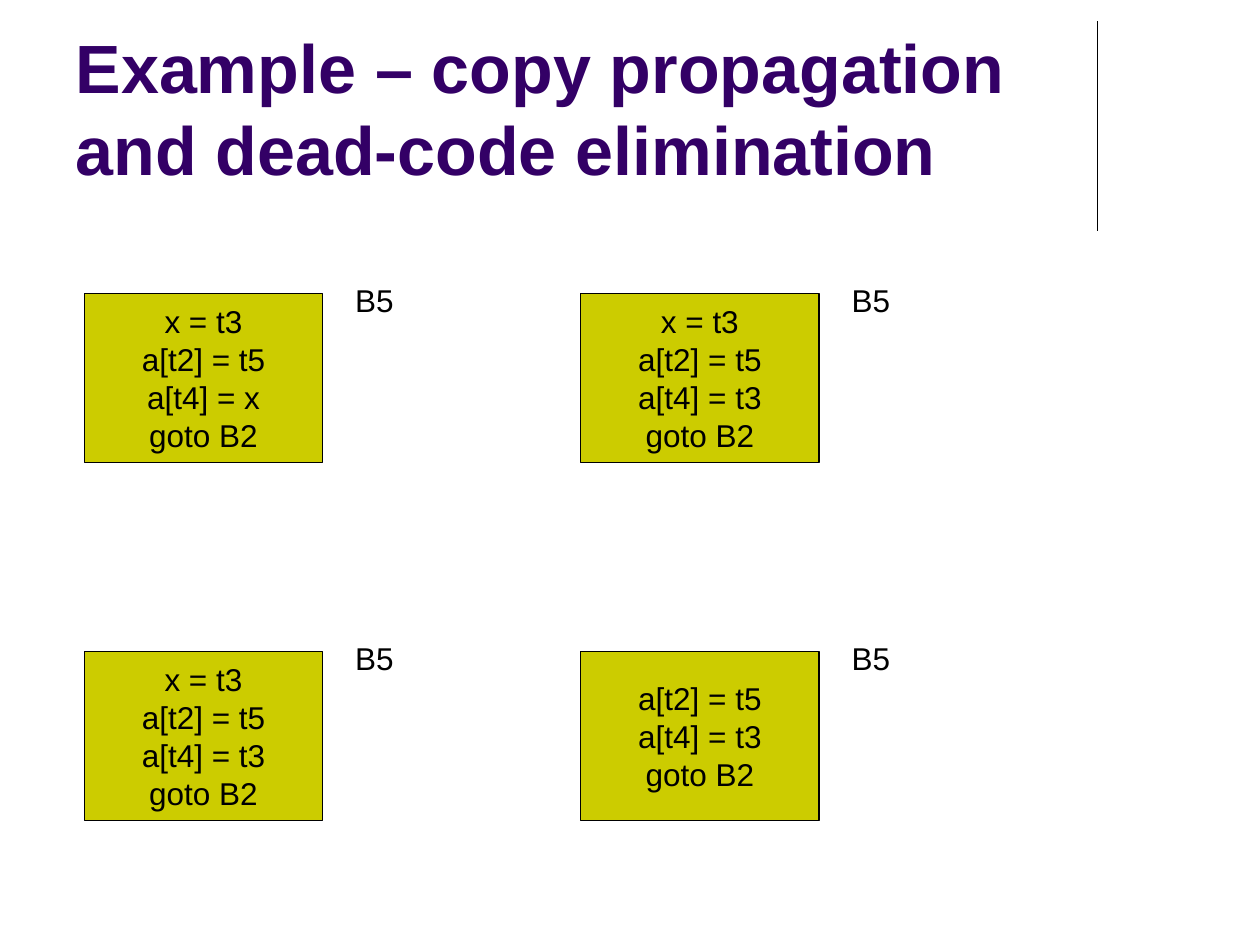
from dataclasses import dataclass

from lxml.etree import SubElement
from pptx import Presentation
from pptx.dml.color import RGBColor
from pptx.enum.shapes import MSO_CONNECTOR, MSO_SHAPE
from pptx.enum.text import MSO_ANCHOR, MSO_AUTO_SIZE, PP_ALIGN
from pptx.oxml.ns import qn
from pptx.slide import Slide
from pptx.text.text import _Paragraph
from pptx.util import Inches, Pt

COLORS = {"title": "330066", "block": "CCCC00", "ink": "000000"}
FONT = "Arial"
COLUMNS = (0.67, 4.61)
ROWS = (2.33, 5.17)
BLOCK_WIDTH, BLOCK_HEIGHT = 1.89, 1.34
LABEL_DX, LABEL_DY = 2.05, -0.15


@dataclass(frozen=True)
class BasicBlock:
    label: str
    column: int
    row: int
    code: tuple[str, ...]


BLOCKS = (
    BasicBlock("B5", 0, 0, ("x = t3", "a[t2] = t5", "a[t4] = x", "goto B2")),
    BasicBlock("B5", 1, 0, ("x = t3", "a[t2] = t5", "a[t4] = t3", "goto B2")),
    BasicBlock("B5", 0, 1, ("x = t3", "a[t2] = t5", "a[t4] = t3", "goto B2")),
    BasicBlock("B5", 1, 1, ("a[t2] = t5", "a[t4] = t3", "goto B2")),
)


def color(name: str) -> RGBColor:
    return RGBColor.from_string(COLORS[name])


def add_run(paragraph: _Paragraph, text: str, size: float = 18,
            ink: str = "ink", bold: bool = False) -> None:
    run = paragraph.add_run()
    run.text = text
    run.font.name = FONT
    run.font.size = Pt(size)
    run.font.bold = bold
    run.font.color.rgb = color(ink)


def add_title(slide: Slide, text: str) -> None:
    title = slide.shapes.title
    title.left, title.top = Inches(0.5), Inches(0.13)
    title.width, title.height = Inches(8.25), Inches(1.42)
    frame = title.text_frame
    frame.word_wrap = True
    frame.auto_size = MSO_AUTO_SIZE.NONE
    frame.vertical_anchor = MSO_ANCHOR.BOTTOM
    heading = frame.paragraphs[0]
    heading.alignment = PP_ALIGN.LEFT
    add_run(heading, text, size=39, ink="title", bold=True)


def add_divider(slide: Slide) -> None:
    divider = slide.shapes.add_connector(
        MSO_CONNECTOR.STRAIGHT,
        Inches(8.71), Inches(0.17), Inches(8.71), Inches(1.83))
    divider.line.color.rgb = color("ink")
    divider.line.width = Pt(0.75)
    SubElement(divider._element.spPr, qn("a:effectLst"))


def add_block(slide: Slide, block: BasicBlock) -> None:
    left, top = COLUMNS[block.column], ROWS[block.row]

    # Code rectangle
    rectangle = slide.shapes.add_shape(
        MSO_SHAPE.RECTANGLE, Inches(left), Inches(top),
        Inches(BLOCK_WIDTH), Inches(BLOCK_HEIGHT))
    rectangle.shadow.inherit = False
    rectangle.fill.solid()
    rectangle.fill.fore_color.rgb = color("block")
    rectangle.line.color.rgb = color("ink")
    rectangle.line.width = Pt(0.75)
    frame = rectangle.text_frame
    frame.word_wrap = False
    frame.vertical_anchor = MSO_ANCHOR.MIDDLE
    for index, statement in enumerate(block.code):
        line = frame.add_paragraph() if index else frame.paragraphs[0]
        line.alignment = PP_ALIGN.CENTER
        add_run(line, statement)

    # Block label
    label = slide.shapes.add_textbox(
        Inches(left + LABEL_DX), Inches(top + LABEL_DY),
        Inches(0.51), Inches(0.4))
    label.text_frame.word_wrap = False
    label.text_frame.auto_size = MSO_AUTO_SIZE.SHAPE_TO_FIT_TEXT
    add_run(label.text_frame.paragraphs[0], block.label)


def main() -> None:
    deck = Presentation()
    deck.slide_width, deck.slide_height = Inches(10), Inches(7.5)
    slide = deck.slides.add_slide(deck.slide_layouts[5])

    add_divider(slide)
    add_title(slide, "Example – copy propagation and dead-code elimination")
    for block in BLOCKS:
        add_block(slide, block)

    deck.save("out.pptx")


if __name__ == "__main__":
    main()
